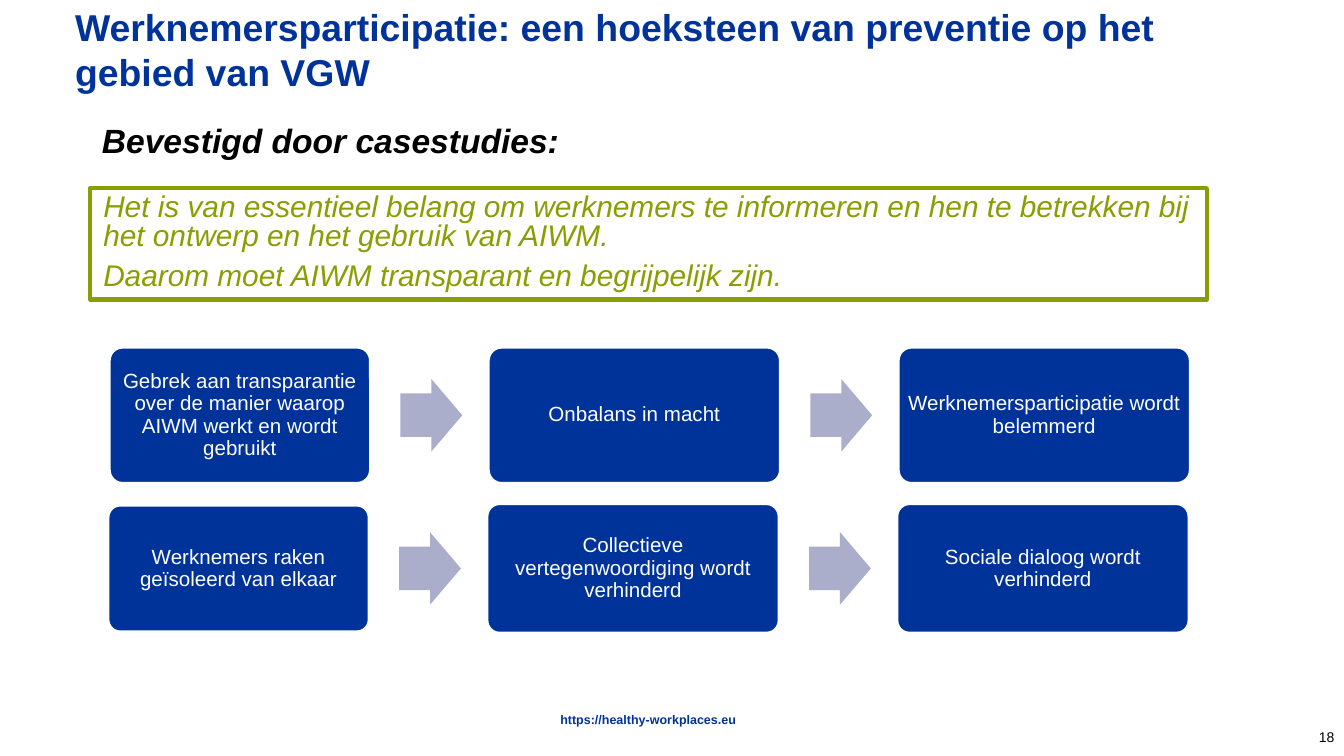
import pptx
import pptx.util
import pptx.dml.color
import pptx.enum.shapes
import pptx.enum.text

Inches = pptx.util.Inches
Pt = pptx.util.Pt
RGB = pptx.dml.color.RGBColor
KIND = pptx.enum.shapes.MSO_SHAPE
ALIGN = pptx.enum.text.PP_ALIGN
ANCHOR = pptx.enum.text.MSO_ANCHOR

BLUE = RGB(0x00, 0x33, 0x99)
GREEN = RGB(0x89, 0x9E, 0x00)
LILAC = RGB(0xAB, 0xAE, 0xCA)
WHITE = RGB(0xFF, 0xFF, 0xFF)
BLACK = RGB(0x00, 0x00, 0x00)

WIDTHS = (1.95, 2.18, 2.18)  # columns of the flow
GAP = 0.87                   # between two columns
INDENT = 0.22                # from a box to its arrow
ARROW = (0.46, 0.54)

# left edge, middle line, box heights, labels
ROWS = (
    (0.81, 3.09, (1.02, 1.02, 1.02),
     ("Gebrek aan transparantie over de manier waarop AIWM werkt en wordt gebruikt",
      "Onbalans in macht",
      "Werknemersparticipatie wordt belemmerd")),
    (0.8, 4.23, (0.95, 0.97, 0.97),
     ("Werknemers raken geïsoleerd van elkaar",
      "Collectieve vertegenwoordiging wordt verhinderd",
      "Sociale dialoog wordt verhinderd")),
)


def write(shape, text, size, color, bold=False, italic=False, align=ALIGN.LEFT,
          anchor=ANCHOR.MIDDLE, inset=(0.1, 0.05), space=1.0, before=0):
    """Fill the shape with text; each line of it becomes a paragraph."""
    frame = shape.text_frame
    frame.text = text
    frame.word_wrap = True
    frame.vertical_anchor = anchor
    frame.margin_left = frame.margin_right = Inches(inset[0])
    frame.margin_top = frame.margin_bottom = Inches(inset[1])
    for i, para in enumerate(frame.paragraphs):
        para.alignment = align
        para.line_spacing = space
        para.space_before = Pt(before if i else 0)
        for run in para.runs:
            font = run.font
            font.name, font.size = "Arial", Pt(size)
            font.bold, font.italic = bold, italic
            font.color.rgb = color


def label(slide, area, text, size, color, **style):
    box = slide.shapes.add_textbox(*map(Inches, area))
    write(box, text, size, color, **style)


def block(slide, kind, area, fill=None, line=None, weight=2):
    shape = slide.shapes.add_shape(kind, *map(Inches, area))
    shape.shadow.inherit = False
    for part, color in ((shape.fill, fill), (shape.line.fill, line)):
        if color is None:
            part.background()
        else:
            part.solid()
            part.fore_color.rgb = color
    if line is not None:
        shape.line.width = Pt(weight)
    return shape


def flow(slide, left, mid, heights, texts):
    """Draw one row of boxes with arrows between them."""
    for i, (width, high, text) in enumerate(zip(WIDTHS, heights, texts)):
        box = block(slide, KIND.ROUNDED_RECTANGLE,
                    (left, mid - high / 2, width, high), BLUE, WHITE)
        box.adjustments[0] = 0.1
        write(box, text, 11, WHITE, align=ALIGN.CENTER,
              inset=(0.03, 0.05), space=0.9)
        left += width
        if i < len(WIDTHS) - 1:
            arrow = block(slide, KIND.RIGHT_ARROW,
                          (left + INDENT, mid - ARROW[1] / 2, *ARROW), LILAC)
            arrow.adjustments[0] = 0.6
            arrow.adjustments[1] = 0.5
        left += GAP


def main():
    deck = pptx.Presentation()
    deck.slide_width = Inches(10)
    deck.slide_height = deck.slide_width * 9 // 16
    slide = deck.slides.add_slide(deck.slide_layouts[6])

    label(slide, (9.33, 5.33, 0.67, 0.3), "18", 7.5, BLACK,
          align=ALIGN.RIGHT, inset=(0.07, 0.04))
    label(slide, (1.52, 5.31, 6.61, 0.09), "https://healthy-workplaces.eu", 6.7,
          BLUE, bold=True, align=ALIGN.CENTER, anchor=ANCHOR.TOP,
          inset=(0, 0), space=0.9)
    label(slide, (0.46, -0.02, 8.79, 0.77),
          "Werknemersparticipatie: een hoeksteen van preventie op het gebied van VGW",
          20, BLUE, bold=True)
    for row in ROWS:
        flow(slide, *row)
    quote = block(slide, KIND.RECTANGLE, (0.67, 1.4, 8.31, 0.83),
                  line=GREEN, weight=2.25)
    write(quote, "Het is van essentieel belang om werknemers te informeren en hen "
          "te betrekken bij het ontwerp en het gebruik van AIWM.\n"
          "Daarom moet AIWM transparant en begrijpelijk zijn.",
          16, GREEN, italic=True, anchor=ANCHOR.TOP, space=0.8, before=6)
    label(slide, (0.66, 0.84, 9.08, 0.4), "Bevestigd door casestudies:", 18,
          BLACK, bold=True, italic=True)
    deck.save("out.pptx")


if __name__ == "__main__":
    main()
